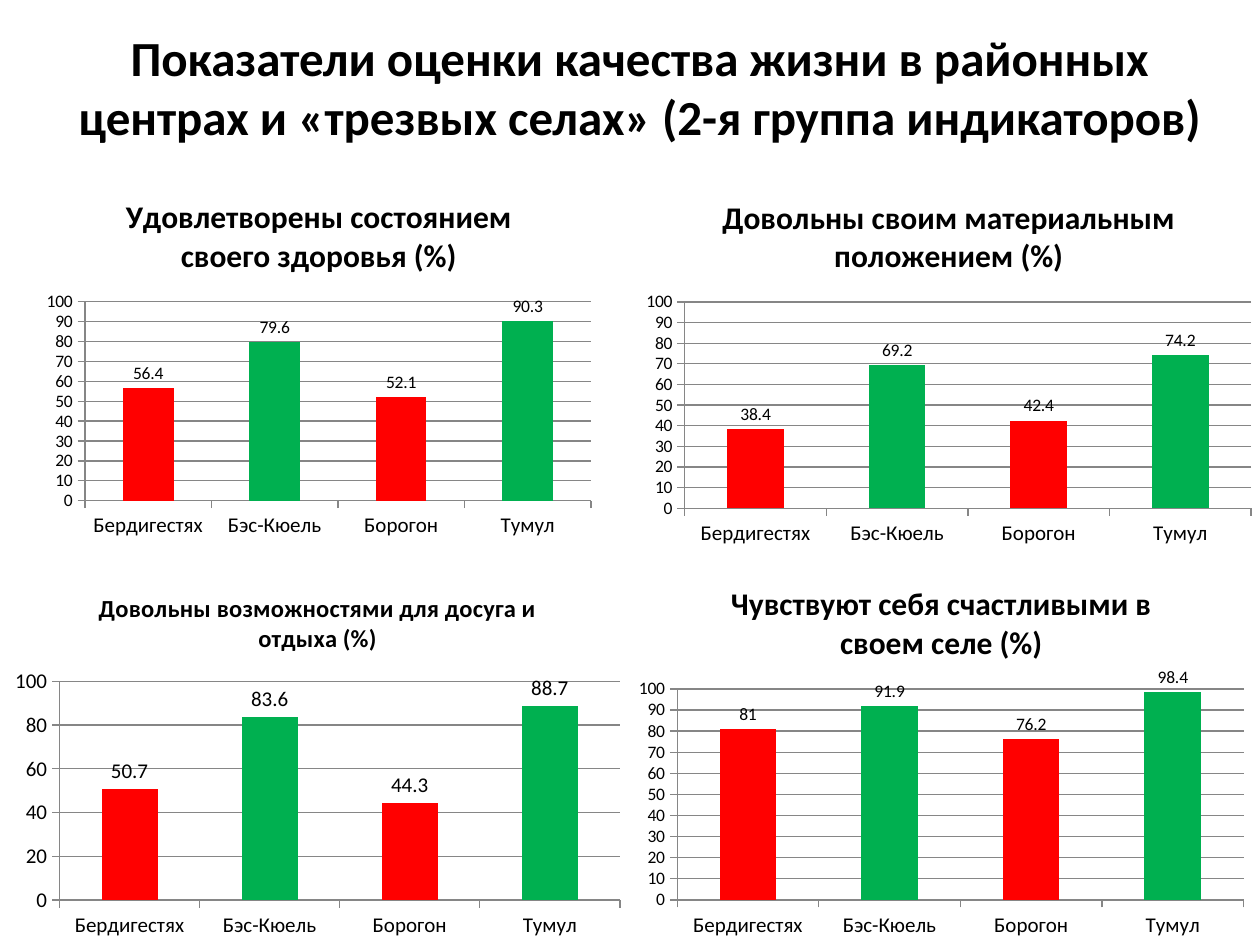
from pptx import Presentation, util as u
from pptx.chart.data import CategoryChartData
from pptx.dml.color import RGBColor
from pptx.enum import chart as ch, text

FONT = "Calibri"
BLACK, GRID, RED, GREEN = "000000", "868686", "FF0000", "00B050"
COLS, ROWS = 100, 75
VILLAGES = ["Бердигестях", "Бэс-Кюель", "Борогон", "Тумул"]
HEADING = ("Показатели оценки качества жизни в районных центрах "
           "и «трезвых селах» (2-я группа индикаторов)")

# title, title size, number size, values, (column, row, columns, rows)
CHARTS = [
    ("Удовлетворены состоянием своего здоровья (%)", 18, 10,
     [56.4, 79.6, 52.1, 90.3], (2.8, 13.9, 45, 29.4)),
    ("Довольны своим материальным положением (%)", 18, 10,
     [38.4, 69.2, 42.4, 74.2], (50.3, 13.9, 50, 30)),
    ("Довольны возможностями для досуга и отдыха (%)", 14, 12,
     [50.7, 83.6, 44.3, 88.7], (0.2, 45.4, 50, 29.6)),
    ("Чувствуют себя счастливыми в своем селе (%)", 18, 10,
     [81, 91.9, 76.2, 98.4], (49.7, 44.6, 50, 30.4)),
]


def color(value):
    return RGBColor.from_string(value)


def place(prs, col, row, cols, rows):
    """Turn grid columns and rows into slide lengths."""
    dx, dy = prs.slide_width / COLS, prs.slide_height / ROWS
    return int(col * dx), int(row * dy), int(cols * dx), int(rows * dy)


def set_font(font, size, bold=False):
    font.name, font.size, font.bold = FONT, u.Pt(size), bold
    font.color.rgb = color(BLACK)


def set_line(line):
    line.color.rgb = color(GRID)
    line.width = u.Pt(0.75)


def add_heading(prs, s):
    tf = s.shapes.add_textbox(*place(prs, 5, 3, 91.5, 7.7)).text_frame
    tf.word_wrap = True
    tf.vertical_anchor = text.MSO_ANCHOR.MIDDLE
    p = tf.paragraphs[0]
    p.text = HEADING
    p.alignment = text.PP_ALIGN.CENTER
    set_font(p.font, 28, bold=True)


def style_axes(chart, size):
    for axis, axis_size in ((chart.category_axis, 12), (chart.value_axis, size)):
        set_font(axis.tick_labels.font, axis_size)
        axis.major_tick_mark = ch.XL_TICK_MARK.OUTSIDE
        axis.minor_tick_mark = ch.XL_TICK_MARK.NONE
        set_line(axis.format.line)
    axis = chart.value_axis
    axis.minimum_scale, axis.maximum_scale = 0, 100
    axis.major_unit = 20 if size == 12 else 10
    axis.has_major_gridlines = True
    set_line(axis.major_gridlines.format.line)


def style_bars(plot, size):
    plot.gap_width = 150
    plot.vary_by_categories = False
    plot.has_data_labels = True
    labels = plot.data_labels
    labels.show_value = True
    labels.position = ch.XL_LABEL_POSITION.OUTSIDE_END
    set_font(labels.font, size)
    for i in range(len(VILLAGES)):
        fill = plot.series[0].points[i].format.fill
        fill.solid()
        fill.fore_color.rgb = color(GREEN if i % 2 else RED)


def add_bar_chart(prs, s, title, title_size, size, values, cell):
    data = CategoryChartData(number_format="General")
    data.categories = VILLAGES
    data.add_series(title, values)
    chart = s.shapes.add_chart(ch.XL_CHART_TYPE.COLUMN_CLUSTERED,
                               *place(prs, *cell), data).chart
    set_font(chart.font, size)
    chart.has_legend = False
    chart.has_title = True
    p = chart.chart_title.text_frame.paragraphs[0]
    p.text = title
    set_font(p.font, title_size, bold=True)
    chart.chart_title.include_in_layout = False
    style_axes(chart, size)
    style_bars(chart.plots[0], size)


def main():
    prs = Presentation()
    prs.slide_width, prs.slide_height = u.Inches(10), u.Inches(7.5)
    s = prs.slides.add_slide(prs.slide_layouts[6])
    for spec_row in CHARTS:
        add_bar_chart(prs, s, *spec_row)
    add_heading(prs, s)
    prs.save("out.pptx")


if __name__ == "__main__":
    main()
